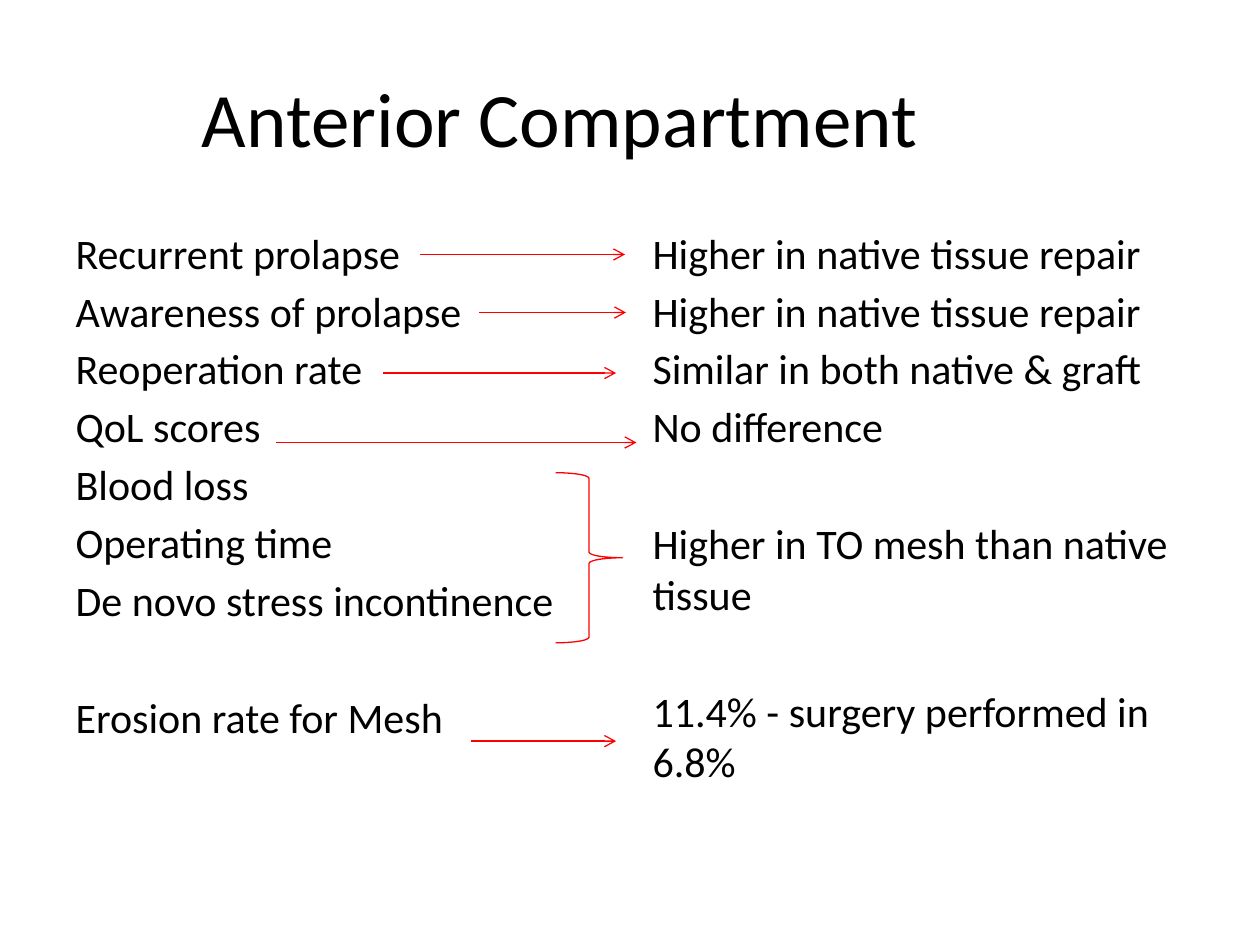
from lxml.etree import SubElement
from pptx import Presentation
from pptx.dml.color import RGBColor
from pptx.enum.shapes import MSO_CONNECTOR as Connector, MSO_SHAPE as Shape
from pptx.enum.text import MSO_ANCHOR as Anchor, PP_ALIGN as Align
from pptx.oxml.ns import qn
from pptx.util import Cm, Pt

BLACK = RGBColor(0x00, 0x00, 0x00)
RED = RGBColor(0xFF, 0x00, 0x00)
FONT = "Calibri"
TWO_CONTENT = 3
LINE_GAP, GROUP_GAP = 4.3, 38  # points before a paragraph

# (text, starts a new group)
OUTCOMES = [
    ("Recurrent prolapse", False),
    ("Awareness of prolapse", False),
    ("Reoperation rate", False),
    ("QoL scores", False),
    ("Blood loss", False),
    ("Operating time", False),
    ("De novo stress incontinence", False),
    ("Erosion rate for Mesh", True),
]
FINDINGS = [
    ("Higher in native tissue repair", False),
    ("Higher in native tissue repair", False),
    ("Similar in both native & graft", False),
    ("No difference", False),
    ("Higher in TO mesh than native tissue", True),
    ("11.4% - surgery performed in 6.8%", True),
]
# Start x, end x and y of each arrow, in cm
ARROWS = [
    (8.46, 12.6, 5.13),
    (9.65, 12.62, 6.3),
    (7.72, 12.42, 7.52),
    (5.56, 12.83, 8.92),
    (9.5, 12.42, 14.94),
]


def place(sp, left, top, width, height):
    sp.left, sp.top = Cm(left), Cm(top)
    sp.width, sp.height = Cm(width), Cm(height)


def format_runs(p, size):
    for r in p.runs:
        r.font.name = FONT
        r.font.size = Pt(size)
        r.font.color.rgb = BLACK


def fill_title(sp, text):
    place(sp, 1.27, 0.76, 20.04, 3.18)
    tf = sp.text_frame
    tf.text = text
    tf.vertical_anchor = Anchor.MIDDLE
    p = tf.paragraphs[0]
    p.alignment = Align.CENTER
    format_runs(p, 44)


def fill_list(sp, left, items):
    place(sp, left, 4.45, 11.23, 12.57)
    tf = sp.text_frame
    for i, (text, new_group) in enumerate(items):
        p = tf.add_paragraph() if i else tf.paragraphs[0]
        p.text = text
        p.space_before = Pt((GROUP_GAP if new_group else LINE_GAP) if i else 0)
        pPr = p._p.get_or_add_pPr()
        pPr.set("marL", "0")
        pPr.set("indent", "0")
        SubElement(pPr, qn("a:buNone"))
        format_runs(p, 24)


def style_line(sp):
    sp.line.color.rgb = RED
    sp.line.width = Pt(0.75)


def add_brace(slide, left, top, width, height):
    sp = slide.shapes.add_shape(
        Shape.RIGHT_BRACE, Cm(left), Cm(top), Cm(width), Cm(height))
    sp.shadow.inherit = False
    sp.fill.background()
    style_line(sp)


def add_arrow(slide, x1, x2, y):
    sp = slide.shapes.add_connector(
        Connector.STRAIGHT, Cm(x1), Cm(y), Cm(x2), Cm(y))
    style_line(sp)
    SubElement(sp.line._get_or_add_ln(), qn("a:tailEnd"), type="arrow")
    SubElement(sp._element.spPr, qn("a:effectLst"))


def main():
    prs = Presentation()
    prs.slide_width, prs.slide_height = Cm(25.4), Cm(19.05)
    slide = prs.slides.add_slide(prs.slide_layouts[TWO_CONTENT])
    title, left_body, right_body = slide.placeholders

    # Title and the two columns
    fill_title(title, "Anterior Compartment")
    fill_list(left_body, 1.27, OUTCOMES)
    fill_list(right_body, 12.9, FINDINGS)

    # Links from outcomes to findings
    add_brace(slide, 11.2, 9.53, 1.35, 3.43)
    for arrow in ARROWS:
        add_arrow(slide, *arrow)

    prs.save("out.pptx")


if __name__ == "__main__":
    main()
